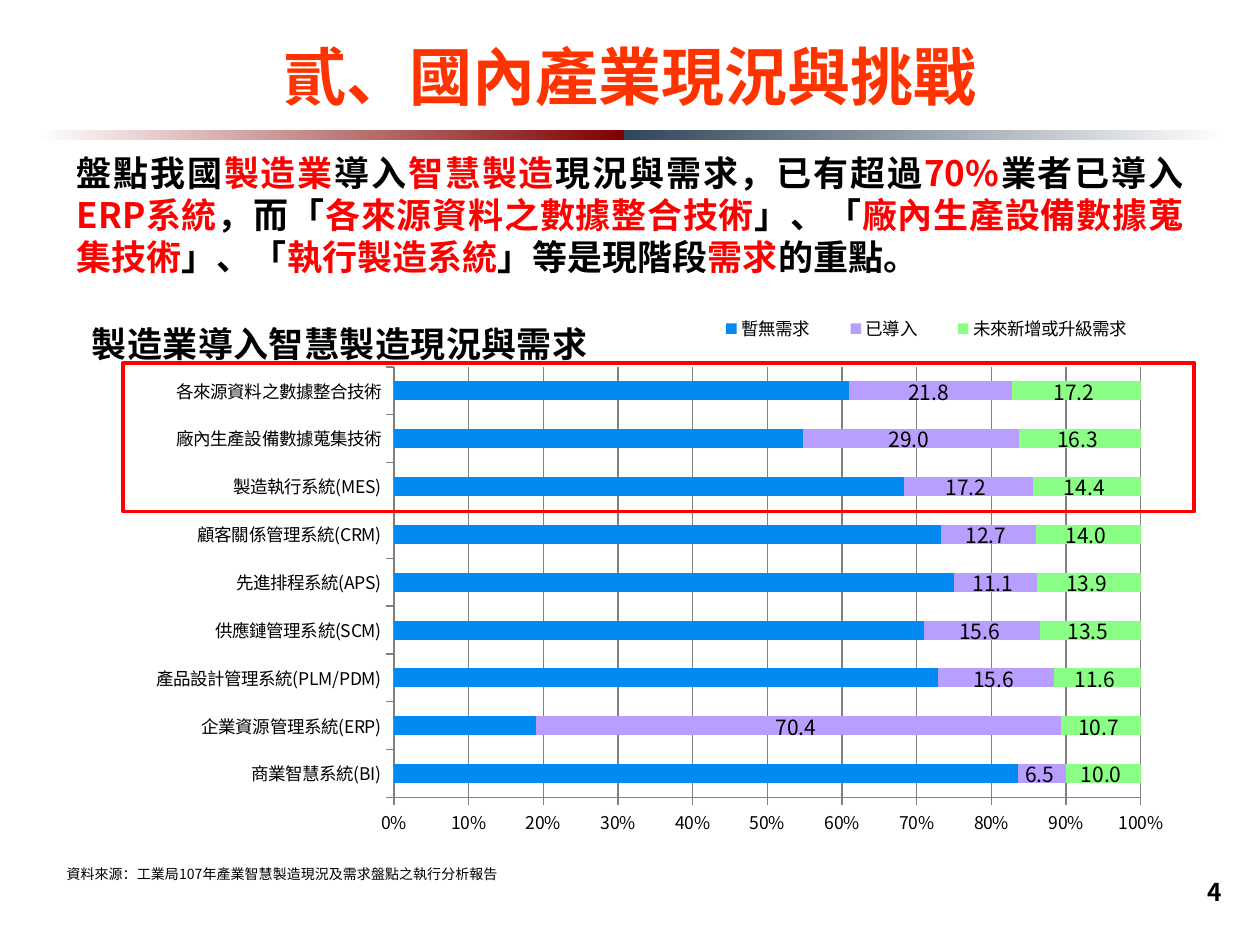
import pptx
import pptx.util
import pptx.chart.data
import pptx.dml.color
import pptx.enum.chart
import pptx.enum.shapes
import pptx.enum.text
import pptx.oxml
import pptx.oxml.ns

Inches, Pt = pptx.util.Inches, pptx.util.Pt
Align = pptx.enum.text.PP_ALIGN
Anchor = pptx.enum.text.MSO_ANCHOR
Rect = pptx.enum.shapes.MSO_SHAPE.RECTANGLE
FACE = "Noto Sans CJK SC"
BLACK, RED, GRAY = "000000", "FF0000", "808080"

TITLE = "貳、國內產業現況與挑戰"
INTRO = [
    "盤點我國", "製造業", "導入", "智慧製造", "現況與需求，已有超過", "70%",
    "業者已導入", "ERP系統", "，而「", "各來源資料之數據整合技術", "」、「",
    "廠內生產設備數據蒐集技術", "」、「", "執行製造系統", "」等是現階段",
    "需求", "的重點。",
]
SOURCE = "資料來源：工業局107年產業智慧製造現況及需求盤點之執行分析報告"
HEAD = "製造業導入智慧製造現況與需求"
NAMES = [("暫無需求", "008AF2"), ("已導入", "B89FFF"), ("未來新增或升級需求", "8BFF85")]
ROWS = [
    ("商業智慧系統(BI)", 84, 6.5, 10),
    ("企業資源管理系統(ERP)", 19, 70.4, 10.7),
    ("產品設計管理系統(PLM/PDM)", 73, 15.6, 11.6),
    ("供應鏈管理系統(SCM)", 71, 15.6, 13.5),
    ("先進排程系統(APS)", 75, 11.1, 13.9),
    ("顧客關係管理系統(CRM)", 73, 12.7, 14),
    ("製造執行系統(MES)", 68, 17.2, 14.4),
    ("廠內生產設備數據蒐集技術", 55, 29, 16.3),
    ("各來源資料之數據整合技術", 61, 21.8, 17.2),
]
BANDS = [(0.29, 4.66, "FFFFFF", "800000"), (4.95, 4.78, "314659", "FFFFFF")]


def rgb(code):
    return pptx.dml.color.RGBColor.from_string(code)


def style(font, size, color=BLACK, bold=False):
    font.size, font.bold, font.name = Pt(size), bold, FACE
    font.color.rgb = rgb(color)
    east = pptx.oxml.parse_xml(
        f'<a:ea {pptx.oxml.ns.nsdecls("a")} typeface="{FACE}"/>')
    font._rPr.append(east)


def write(box, parts, size, bold=False, align=Align.LEFT, space=None):
    para = box.text_frame.paragraphs[0]
    para.alignment = align
    if space:
        para.line_spacing = Pt(space)
    for text, color in parts:
        run = para.add_run()
        run.text = text
        style(run.font, size, color, bold)


def place(shape, left, top, width, height):
    shape.left, shape.top = Inches(left), Inches(top)
    shape.width, shape.height = Inches(width), Inches(height)


def add_text(slide, spot, *args, **opts):
    box = slide.shapes.add_textbox(*map(Inches, spot))
    box.text_frame.word_wrap = True
    write(box, *args, **opts)
    return box


def add_rect(slide, *spot):
    shape = slide.shapes.add_shape(Rect, *map(Inches, spot))
    shape.shadow.inherit = False
    return shape


def layout(owner, inner=False, **spot):
    for old in owner.findall(pptx.oxml.ns.qn("c:layout")):
        owner.remove(old)
    target = '<c:layoutTarget val="inner"/>' if inner else ""
    modes = "".join(f'<c:{k}Mode val="edge"/>' for k in "xy")
    sizes = "".join(f'<c:{k} val="{v}"/>' for k, v in spot.items())
    node = pptx.oxml.parse_xml(
        f'<c:layout {pptx.oxml.ns.nsdecls("c")}><c:manualLayout>'
        f'{target}{modes}{sizes}</c:manualLayout></c:layout>')
    marks = [pptx.oxml.ns.qn(f"c:{n}") for n in ("tx", "legendPos")]
    spots = [i + 1 for i, kid in enumerate(owner) if kid.tag in marks]
    owner.insert(spots[0] if spots else 0, node)


def add_chart(slide):
    data = pptx.chart.data.CategoryChartData(number_format="0.0_ ")
    labels, *columns = zip(*ROWS)
    data.categories = labels
    for (name, _), column in zip(NAMES, columns):
        data.add_series(name, column)
    kind = pptx.enum.chart.XL_CHART_TYPE.BAR_STACKED_100
    spot = map(Inches, (0.59, 2.25, 8.9, 4.48))
    chart = slide.shapes.add_chart(kind, *spot, data).chart
    style(chart.font, 10)

    chart.has_title = True
    para = chart.chart_title.text_frame.paragraphs[0]
    para.text = HEAD
    style(para.runs[0].font, 20, bold=True)
    layout(chart.chart_title._element, x=0.01, y=0.04)

    chart.has_legend = True
    chart.legend.position = pptx.enum.chart.XL_LEGEND_POSITION.RIGHT
    chart.legend.include_in_layout = False
    style(chart.legend.font, 10)
    layout(chart.legend._element, x=0.55, y=0.04, w=0.42, h=0.08)
    layout(chart._chartSpace.chart.plotArea, True, x=0.285, y=0.148, w=0.666, h=0.763)

    plot = chart.plots[0]
    plot.gap_width, plot.overlap, plot.vary_by_categories = 150, 100, False
    for index, (series, (_, color)) in enumerate(zip(plot.series, NAMES)):
        series.format.fill.solid()
        series.format.fill.fore_color.rgb = rgb(color)
        if index:
            tags = series.data_labels
            tags.show_value = True
            tags.number_format, tags.number_format_is_linked = "0.0_ ", False
            style(tags.font, 12)

    outside = pptx.enum.chart.XL_TICK_MARK.OUTSIDE
    for axis in (chart.category_axis, chart.value_axis):
        axis.major_tick_mark = outside
        axis.format.line.color.rgb = rgb(GRAY)
        style(axis.tick_labels.font, 10)
    axis = chart.value_axis
    axis.minimum_scale, axis.maximum_scale, axis.major_unit = 0, 1, 0.1
    axis.has_major_gridlines = True
    axis.major_gridlines.format.line.color.rgb = rgb(GRAY)
    axis.tick_labels.number_format = "0%"
    axis.tick_labels.number_format_is_linked = False


def main():
    deck = pptx.Presentation()
    deck.slide_width, deck.slide_height = Inches(10), Inches(7.5)
    slide = deck.slides.add_slide(deck.slide_layouts[5])

    for left, width, start, end in BANDS:
        band = add_rect(slide, left, 1.03, width, 0.08)
        band.line.fill.background()
        band.fill.gradient()
        band.fill.gradient_angle = 0
        for stop, color, spot in zip(band.fill.gradient_stops, (start, end), (0, 1)):
            stop.color.rgb, stop.position = rgb(color), spot

    title = slide.shapes.title
    place(title, 0, 0.05, 10, 1.1)
    title.text_frame.vertical_anchor = Anchor.MIDDLE
    write(title, [(TITLE, "FF3300")], 36, True, Align.CENTER)

    parts = [(text, RED if i % 2 else BLACK) for i, text in enumerate(INTRO)]
    add_text(slide, (0.51, 1.15, 8.98, 1.11), parts, 20, True, Align.JUSTIFY, 24)
    add_text(slide, (0.43, 6.82, 3.65, 0.24), [(SOURCE, BLACK)], 8, space=9.7)
    add_chart(slide)

    frame = add_rect(slide, 0.98, 2.88, 8.5, 1.18)
    frame.fill.background()
    frame.line.color.rgb, frame.line.width = rgb(RED), Pt(2.25)

    page = add_text(slide, (7.72, 6.83, 2.08, 0.5), [("4", BLACK)], 14, True, Align.RIGHT)
    page.text_frame.vertical_anchor = Anchor.MIDDLE
    deck.save("out.pptx")


if __name__ == "__main__":
    main()
